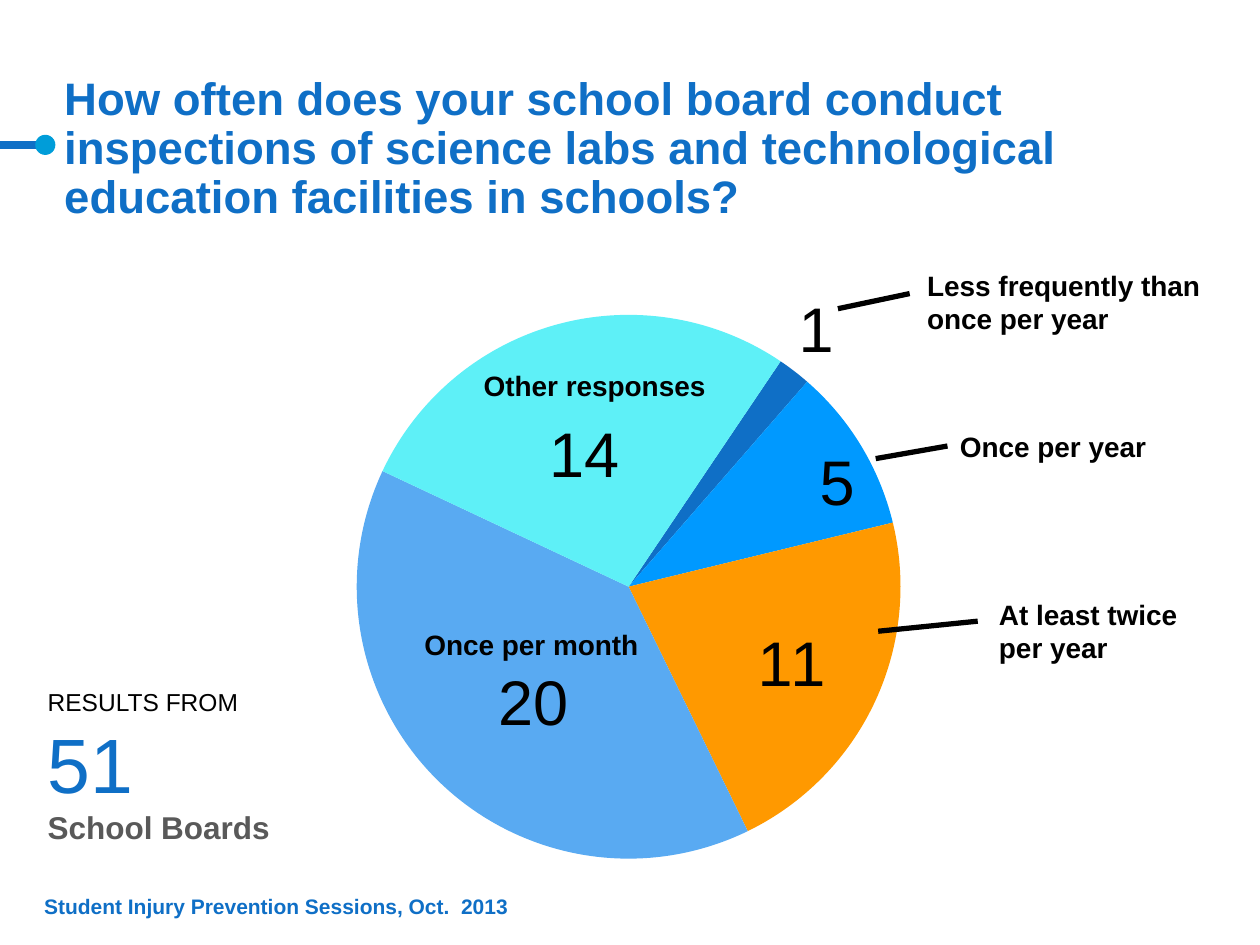
from lxml import etree
from pptx import Presentation
from pptx.chart.data import CategoryChartData
from pptx.dml.color import RGBColor
from pptx.enum.chart import XL_CHART_TYPE as ChartType, XL_LABEL_POSITION as LabelPosition
from pptx.enum.shapes import MSO_CONNECTOR as Connector, MSO_SHAPE as Shape
from pptx.enum.text import MSO_ANCHOR as Anchor, MSO_AUTO_SIZE as AutoSize, PP_ALIGN as Align
from pptx.oxml import parse_xml
from pptx.oxml.ns import nsdecls, qn
from pptx.util import Pt

PX = 9144
BLUE, BLACK = "0F6FC6", "000000"


def color(value):
    return RGBColor.from_string(value)


def write(shape, lines):
    frame = shape.text_frame
    frame.word_wrap = True
    frame.text = "\n".join(line[0] for line in lines)
    for para, (_, size, shade, bold) in zip(frame.paragraphs, lines):
        para.alignment = Align.LEFT
        font = para.runs[0].font
        font.name, font.size, font.bold = "Arial", Pt(size), bold
        font.color.rgb = color(shade)
    return frame


deck = Presentation()
deck.slide_width, deck.slide_height = 1000 * PX, 750 * PX
page = deck.slides.add_slide(deck.slide_layouts[5])
shapes = page.shapes

data = CategoryChartData()
data.categories = ["1", "2", "3", "4", "5"]
data.add_series("Series 1", (1, 5, 11, 20, 14))
chart = shapes.add_chart(
    ChartType.PIE, 185 * PX, 178 * PX, 654 * PX, 543 * PX, data).chart
chart.has_legend = False
chart.has_title = False
chart.font.name, chart.font.size = "Vollkorn", Pt(18)
chart.font.color.rgb = color(BLACK)

plot = chart.plots[0]
plot.vary_by_categories = True
plot.has_data_labels = True
plot.data_labels.show_value = True
plot.data_labels.font.name, plot.data_labels.font.size = "Arial", Pt(36)

slices = [
    (BLUE, LabelPosition.OUTSIDE_END, None),
    ("0099FF", LabelPosition.INSIDE_END, None),
    ("FF9900", LabelPosition.CENTER, (0.05, 0.03)),
    ("59AAF2", LabelPosition.CENTER, (0, 0.03)),
    ("5EF0F7", LabelPosition.CENTER, (-0.01, 0)),
]
series = plot.series[0]
for index, (fill, position, shift) in enumerate(slices):
    point = series.points[index]
    point.format.fill.solid()
    point.format.fill.fore_color.rgb = color(fill)
    point.format.line.fill.background()
    label = point.data_label
    label.font.name, label.font.size = "Arial", Pt(36)
    label.font.color.rgb = color(BLACK)
    label.position = position
    if shift:
        layout = parse_xml(
            f'<c:layout {nsdecls("c")}><c:manualLayout><c:x val="{shift[0]}"/>'
            f'<c:y val="{shift[1]}"/></c:manualLayout></c:layout>')
        entry = series._element.xpath(f'c:dLbls/c:dLbl[c:idx/@val="{index}"]')[0]
        entry.find(qn("c:idx")).addnext(layout)

pie = chart._chartSpace.xpath(".//c:pieChart")[0]
for angle in pie.findall(qn("c:firstSliceAng")):
    pie.remove(angle)
etree.SubElement(pie, qn("c:firstSliceAng")).set("val", "34")
area = pie.getparent()
for layout in area.findall(qn("c:layout")):
    area.remove(layout)
area.insert(0, parse_xml(
    f'<c:layout {nsdecls("c")}><c:manualLayout><c:layoutTarget val="inner"/>'
    '<c:xMode val="edge"/><c:yMode val="edge"/><c:x val="0.15"/><c:y val="0.13"/>'
    '<c:w val="0.66"/><c:h val="0.8"/></c:manualLayout></c:layout>'))

title = shapes.title
title.left, title.top, title.width, title.height = 51 * PX, -3 * PX, 948 * PX, 180 * PX
frame = write(title, [(
    "How often does your school board conduct inspections of science labs "
    "and technological education facilities in schools?", 26, BLUE, True)])
frame.auto_size = AutoSize.NONE
frame.vertical_anchor = Anchor.BOTTOM
frame.margin_left = frame.margin_right = frame.margin_bottom = 0
frame.margin_top = 5 * PX
frame.paragraphs[0].line_spacing = Pt(28)

captions = [
    ("Other responses", 374, 288, 197, 64),
    ("Once per month", 327, 493, 197, 37),
    ("Less frequently than once per year", 726, 208, 284, 64),
    ("Once per year", 752, 336, 265, 37),
    ("At least twice per year", 783, 469, 165, 64),
]
for text, left, top, width, height in captions:
    box = shapes.add_textbox(left * PX, top * PX, width * PX, height * PX)
    write(box, [(text, 16, BLACK, True)])

lines = [
    (0, 115, 35, 115, BLUE, 4.75),
    (697, 501, 776, 493, BLACK, 3),
    (665, 245, 722, 233, BLACK, 3),
    (695, 364, 752, 354, BLACK, 3),
]
for x1, y1, x2, y2, shade, weight in lines:
    line = shapes.add_connector(Connector.STRAIGHT, x1 * PX, y1 * PX, x2 * PX, y2 * PX)
    line.line.color.rgb = color(shade)
    line.line.width = Pt(weight)
    etree.SubElement(line._element.spPr, qn("a:effectLst"))

results = shapes.add_textbox(28 * PX, 540 * PX, 213 * PX, 138 * PX)
write(results, [
    ("RESULTS FROM", 14, BLACK, False),
    ("51", 44, BLUE, False),
    ("School Boards", 18, "595959", True),
])

footer = shapes.add_textbox(35 * PX, 703 * PX, 395 * PX, 26 * PX)
frame = write(footer, [("Student Injury Prevention Sessions, Oct.  2013", 12, BLUE, True)])
frame.vertical_anchor = Anchor.BOTTOM
frame.margin_left = frame.margin_right = frame.margin_top = frame.margin_bottom = 0

dot = shapes.add_shape(Shape.OVAL, 28 * PX, 107 * PX, 16 * PX, 16 * PX)
dot.shadow.inherit = False
dot.fill.solid()
dot.fill.fore_color.rgb = color("009DD9")
dot.line.fill.background()

deck.save("out.pptx")
